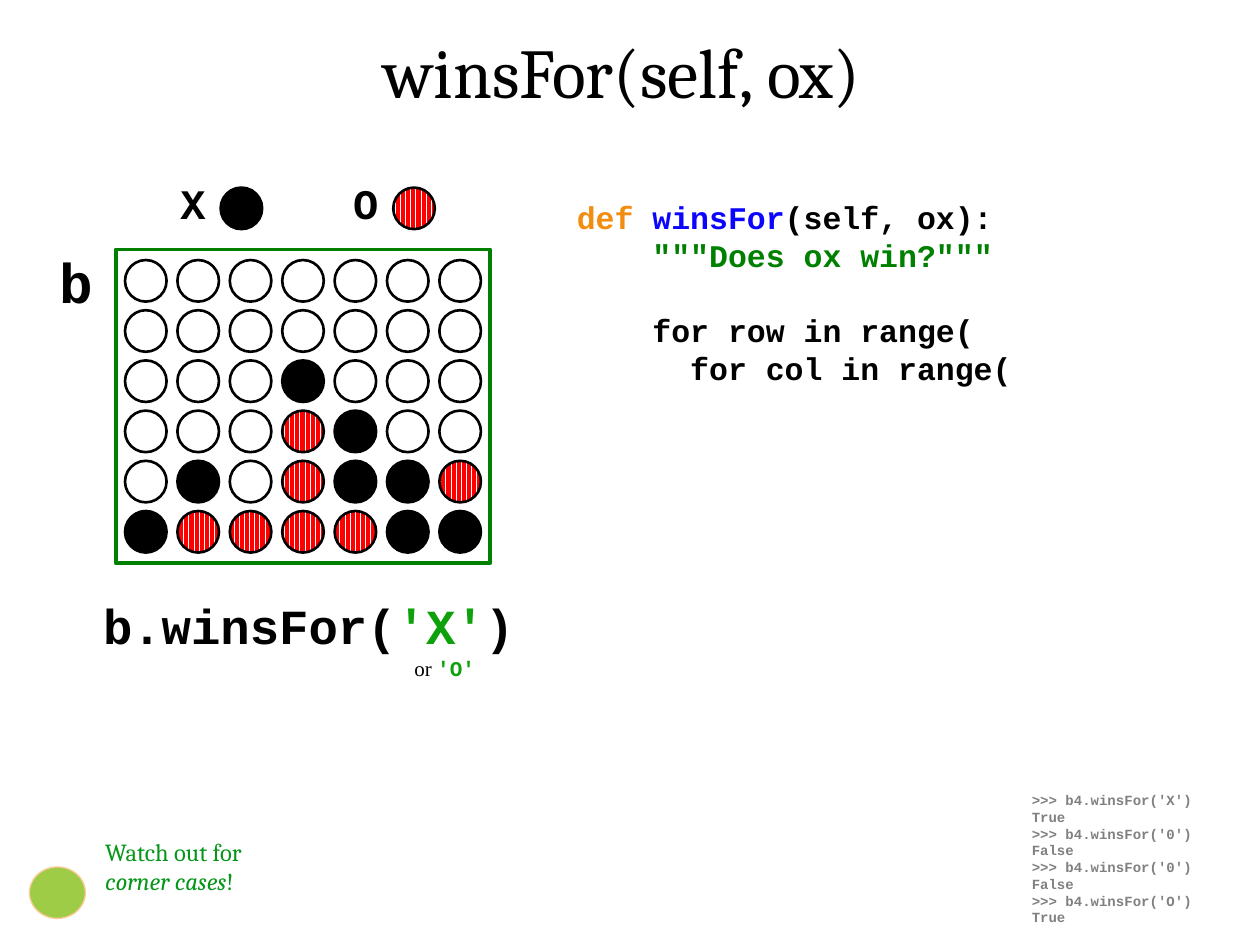
from dataclasses import dataclass

from pptx import Presentation
from pptx.dml.color import RGBColor
from pptx.enum.dml import MSO_PATTERN_TYPE as Pattern
from pptx.enum.shapes import MSO_SHAPE as Shape
from pptx.enum.text import MSO_ANCHOR as Anchor, PP_ALIGN as Align
from pptx.util import Inches, Pt


@dataclass(frozen=True)
class Theme:
    black: str = "000000"
    white: str = "FFFFFF"
    red: str = "FF0000"
    green: str = "008000"
    literal: str = "0FA10C"
    hint: str = "06961A"
    keyword: str = "F38D0F"
    function: str = "0B04FF"
    gray: str = "808080"
    mascot: str = "9ECC46"
    mascot_edge: str = "FFCC99"
    serif: str = "Cambria"
    mono: str = "Courier New"
    plain: str = "Times New Roman"
    title: int = 40
    board_name: int = 32
    call: int = 28
    legend: int = 24
    code: int = 18
    remark: int = 14
    option: int = 12
    session: int = 8


@dataclass(frozen=True)
class Box:
    left: float
    top: float
    width: float
    height: float

    def inner(self, left, top, width, height):
        """Return an inner box given as percentages of this one."""
        return Box(self.left + self.width * left / 100,
                   self.top + self.height * top / 100,
                   self.width * width / 100, self.height * height / 100)

    def square(self, across, down, size):
        """Return a square of fixed size centred at a percentage point."""
        return Box(self.left + self.width * across / 100 - size / 2,
                   self.top + self.height * down / 100 - size / 2, size, size)

    def lengths(self):
        return [Inches(n) for n in (self.left, self.top, self.width, self.height)]


THEME = Theme()
PAGE = Box(0, 0, 10, 7.5)
DISC = 0.33
CODE_INDENT = 0.15  # width of one code character, in inches
BOARD = (
    ".......",
    ".......",
    "...X...",
    "...OX..",
    ".X.OXXO",
    "XOOOOXX",
)


def rgb(value):
    return RGBColor.from_string(value)


def add_outlined(slide, kind, box, line, weight):
    shape = slide.shapes.add_shape(kind, *box.lengths())
    shape.shadow.inherit = False
    shape.line.color.rgb = rgb(line)
    shape.line.width = Pt(weight)
    return shape


def add_disc(slide, box, mark):
    disc = add_outlined(slide, Shape.OVAL, box, THEME.black, 1.5)
    if mark == "O":
        disc.fill.patterned()
        disc.fill.pattern = Pattern.DARK_VERTICAL
        disc.fill.fore_color.rgb = rgb(THEME.red)
        disc.fill.back_color.rgb = rgb(THEME.white)
    else:
        disc.fill.solid()
        disc.fill.fore_color.rgb = rgb(THEME.black if mark == "X" else THEME.white)


def add_text(slide, box, lines, size, font=THEME.mono, color=THEME.black,
             bold=True, align=Align.LEFT):
    """Add lines of (text, font changes) runs and return their paragraphs."""
    frame = slide.shapes.add_textbox(*box.lengths()).text_frame
    frame.word_wrap = True
    for number, runs in enumerate(lines):
        paragraph = frame.add_paragraph() if number else frame.paragraphs[0]
        paragraph.alignment = align
        paragraph.font.size = Pt(size)
        paragraph.font.name = font
        paragraph.font.bold = bold
        paragraph.font.color.rgb = rgb(color)
        for text, changes in runs:
            run = paragraph.add_run()
            run.text = text
            for name, value in changes.items():
                if name == "color":
                    run.font.color.rgb = rgb(value)
                else:
                    setattr(run.font, name, value)
    return frame.paragraphs


def add_title(slide, box):
    title = slide.shapes.title
    title.left, title.top, title.width, title.height = box.lengths()
    title.text_frame.text = "winsFor(self, ox)"
    title.text_frame.vertical_anchor = Anchor.TOP
    paragraph = title.text_frame.paragraphs[0]
    paragraph.alignment = Align.CENTER
    paragraph.font.size = Pt(THEME.title)
    paragraph.font.name = THEME.serif
    paragraph.font.color.rgb = rgb(THEME.black)


def add_legend(slide, box):
    for number, mark in enumerate("XO"):
        entry = box.inner(50 * number, 0, 50, 100)
        add_disc(slide, entry.square(53, 59, DISC), mark)
        add_text(slide, entry.inner(0, 0, 50, 100), [[(mark, {})]],
                 THEME.legend, align=Align.CENTER)


def add_board(slide, box):
    grid = box.inner(1, 2, 98, 96)
    rows, columns = len(BOARD), len(BOARD[0])
    for row, marks in enumerate(BOARD):
        for column, mark in enumerate(marks):
            center = (100 * (column + 0.5) / columns, 100 * (row + 0.5) / rows)
            add_disc(slide, grid.square(*center, DISC), mark)
    add_outlined(slide, Shape.RECTANGLE, box, THEME.green, 2.25).fill.background()
    add_text(slide, box.inner(-18.5, -2.5, 39, 25), [[("b", {})]], THEME.board_name)


def add_call(slide, box):
    literal = {"color": THEME.literal}
    add_text(slide, box.inner(0, 0, 100, 74),
             [[("b.winsFor(", {}), ("'X'", literal), (")", {})]], THEME.call)
    add_text(slide, box.inner(64.3, 61, 30.6, 39),
             [[("or ", {}), ("'O'", {"name": THEME.mono, "bold": True, **literal})]],
             THEME.option, THEME.plain, bold=False, align=Align.CENTER)


def add_code(slide, box):
    paragraphs = add_text(slide, box, [
        [("def ", {"color": THEME.keyword}), ("winsFor", {"color": THEME.function}),
         ("(self, ox):", {})],
        [('"""Does ox win?"""', {"color": THEME.green})],
        [("for row in range(", {})],
        [("for col in range(", {})],
    ], THEME.code)
    for paragraph, characters in zip(paragraphs, (0, 4, 4, 6)):
        properties = paragraph._p.get_or_add_pPr()
        properties.set("marL", str(Inches(CODE_INDENT * characters)))
        properties.set("indent", "0")
    paragraphs[2].space_before = Pt(THEME.code * 1.2)


def add_hint(slide, box):
    mascot = add_outlined(slide, Shape.OVAL, box.inner(1, 38, 19, 54),
                          THEME.mascot_edge, 0.75)
    mascot.fill.solid()
    mascot.fill.fore_color.rgb = rgb(THEME.mascot)
    add_text(slide, box.inner(22.5, 0, 77.5, 75),
             [[("Watch out for ", {}), ("corner cases", {"italic": True}), ("!", {})]],
             THEME.remark, THEME.serif, THEME.hint, bold=False)


def add_session(slide, box):
    lines = []
    for mark, answer in (("X", True), ("0", False), ("0", False), ("O", True)):
        lines += [[(f">>> b4.winsFor('{mark}')", {})], [(str(answer), {})]]
    add_text(slide, box, lines, THEME.session, color=THEME.gray)


def main():
    presentation = Presentation()
    presentation.slide_width = Inches(PAGE.width)
    presentation.slide_height = Inches(PAGE.height)
    slide = presentation.slides.add_slide(presentation.slide_layouts[5])
    add_title(slide, PAGE.inner(13.3, 2.3, 72.1, 10.3))
    add_board(slide, PAGE.inner(9.2, 26.4, 29.7, 33.2))
    add_legend(slide, PAGE.inner(11.9, 18.1, 27.4, 6.7))
    add_call(slide, PAGE.inner(7.2, 62.4, 35.3, 10.3))
    add_hint(slide, PAGE.inner(2.1, 87.9, 23.4, 10.1))
    add_code(slide, PAGE.inner(44.8, 20.3, 53.6, 29.6))
    add_session(slide, PAGE.inner(80.9, 83.1, 17.5, 15.7))
    presentation.save("out.pptx")


if __name__ == "__main__":
    main()
